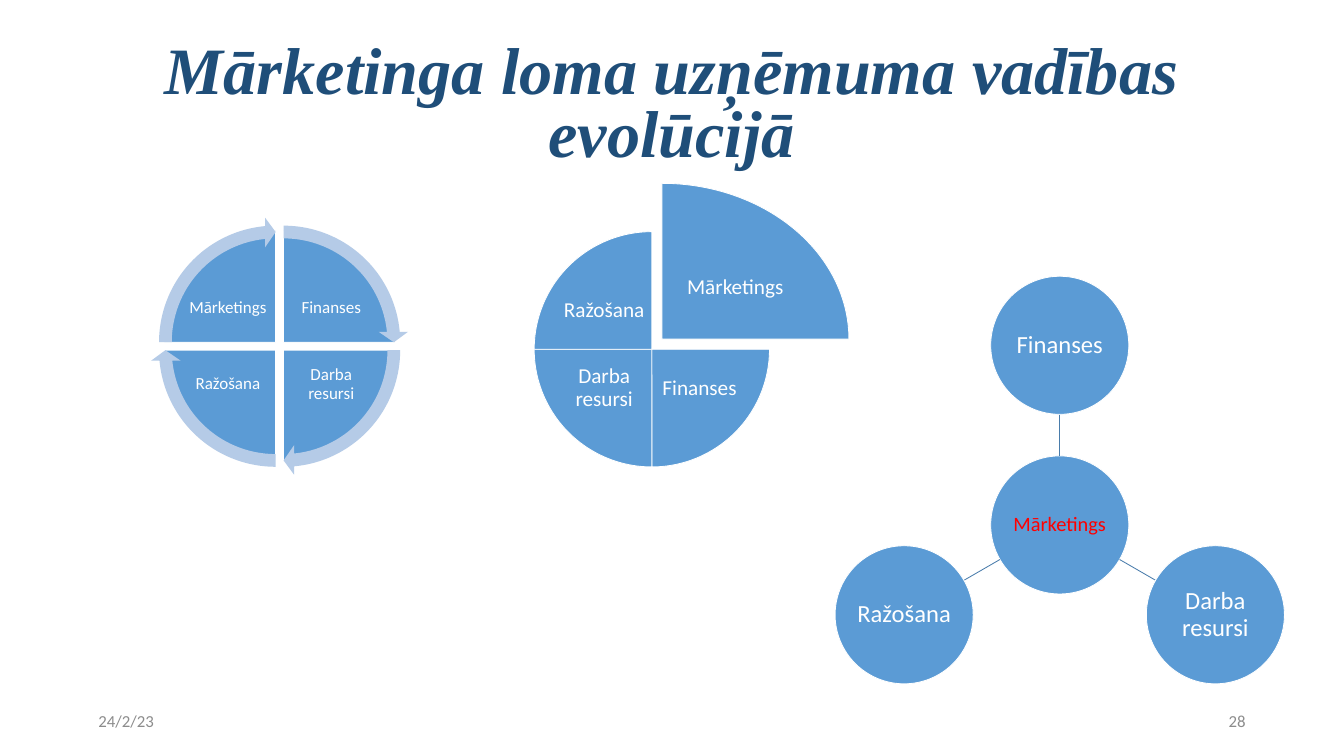
import math
from dataclasses import dataclass
from typing import Any

from lxml import etree
from pptx import Presentation
from pptx import util as u
from pptx.dml.color import RGBColor
from pptx.enum import shapes, text
from pptx.oxml import ns

BLUE = RGBColor(0x5B, 0x9B, 0xD5)
PALE = RGBColor(0xB5, 0xCB, 0xE7)
NAVY = RGBColor(0x1F, 0x4E, 0x79)
SPOKE = RGBColor(0x49, 0x7C, 0xAB)
WHITE = RGBColor(0xFF, 0xFF, 0xFF)
RED = RGBColor(0xFF, 0x00, 0x00)
GREY = RGBColor(0x8C, 0x8C, 0x8C)

LEFT, CENTER, RIGHT = (text.PP_ALIGN.LEFT, text.PP_ALIGN.CENTER,
                       text.PP_ALIGN.RIGHT)
TOP, MIDDLE = text.MSO_ANCHOR.TOP, text.MSO_ANCHOR.MIDDLE
PIE = shapes.MSO_SHAPE.PIE
ARROW = shapes.MSO_SHAPE.CIRCULAR_ARROW
OVAL = shapes.MSO_SHAPE.OVAL

QUADRANTS = [(1, -1), (1, 1), (-1, 1), (-1, -1)]
TURN, QUARTER, ARROW_HEAD = 216, 54, 3.275


def centred(cx, cy, w, h):
    return cx - w / 2, cy - h / 2, w, h


def pie_angles(i):
    return (i - 1) * QUARTER % TURN, i * QUARTER


@dataclass
class Deck:
    """Draws styled elements on the current slide."""
    s: Any
    font: str = "Calibri"

    def fill_text(self, sp, words, size, color, align=CENTER, anchor=MIDDLE,
                  inset=None, spacing=0.9, **font):
        tf = sp.text_frame
        frame = {"word_wrap": True, "vertical_anchor": anchor}
        if inset is not None:
            sides = ("left", "top", "right", "bottom")
            frame |= {f"margin_{side}": u.Inches(inset) for side in sides}
        for name, value in frame.items():
            setattr(tf, name, value)
        p = tf.paragraphs[0]
        p.alignment, p.line_spacing = align, spacing
        r = p.add_run()
        r.text = words
        for name, value in {"name": self.font, "size": u.Pt(size), **font}.items():
            setattr(r.font, name, value)
        r.font.color.rgb = color

    def label(self, box, words, size, color=WHITE, **style):
        sp = self.s.shapes.add_textbox(*map(u.Inches, box))
        self.fill_text(sp, words, size, color, **style)

    def shape(self, kind, box, fill=BLUE, outline=WHITE, adjust=()):
        sp = self.s.shapes.add_shape(kind, *map(u.Inches, box))
        sp.shadow.inherit = False
        sp.fill.solid()
        sp.fill.fore_color.rgb = fill
        if outline is None:
            sp.line.fill.background()
        else:
            sp.line.color.rgb, sp.line.width = outline, u.Pt(1)
        for i, value in enumerate(adjust):
            sp.adjustments[i] = value
        return sp

    def circle(self, cx, cy, diameter, words, size, color=WHITE):
        sp = self.shape(OVAL, centred(cx, cy, diameter, diameter))
        self.fill_text(sp, words, size, color, inset=0.02)

    def line(self, *ends):
        sp = self.s.shapes.add_connector(
            shapes.MSO_CONNECTOR.STRAIGHT, *map(u.Inches, ends))
        sp.line.color.rgb, sp.line.width = SPOKE, u.Pt(1)
        etree.SubElement(sp._element.spPr, ns.qn("a:effectLst"))


def draw_cycle(deck, cx, cy):
    names = ["Finanses", "Darba resursi", "Ražošana", "Mārketings"]
    gap = 0.065
    for i, ((sx, sy), name) in enumerate(zip(QUADRANTS, names)):
        deck.shape(PIE, centred(cx + sx * gap, cy + sy * gap, 3.64, 3.64),
                   adjust=pie_angles(i))
        deck.label(centred(cx + sx * 0.845, cy + sy * 0.625, 1.34, 1), name, 20,
                   inset=0.03)
    for i, (sx, sy) in enumerate(QUADRANTS):
        start, end = pie_angles(i)
        deck.shape(ARROW, centred(cx + sx * gap, cy + sy * gap, 4.09, 4.09),
                   PALE, None,
                   (0.051, ARROW_HEAD, (end - ARROW_HEAD) % TURN, start, 0.059))


def draw_pie(deck, cx, cy):
    deck.shape(PIE, centred(10.83, 5.55, 6.12, 5.1), adjust=pie_angles(0))
    deck.label(centred(12.03, 4.7, 2.26, 1.52), "Mārketings", 25, inset=0.03)
    names = ["Finanses", "Darba resursi", "Ražošana"]
    for i, name in enumerate(names, 1):
        sx, sy = QUADRANTS[i]
        deck.shape(PIE, centred(cx, cy, 3.85, 3.85), adjust=pie_angles(i))
        deck.label(centred(cx + sx * 0.78, cy + sy * 0.64, 1.42, 1.15), name, 25,
                   inset=0.03)


def draw_hub(deck, cx, cy):
    diameter, reach = 2.26, 2.94
    radius = diameter / 2
    deck.circle(cx, cy, diameter, "Mārketings", 24, RED)
    for angle, name in [(-90, "Finanses"), (30, "Darba resursi"),
                        (150, "Ražošana")]:
        dx, dy = math.cos(math.radians(angle)), math.sin(math.radians(angle))
        near, far = radius, reach - radius
        deck.line(cx + near * dx, cy + near * dy, cx + far * dx, cy + far * dy)
        deck.circle(cx + reach * dx, cy + reach * dy, diameter, name, 29)


def main():
    prs = Presentation()
    prs.slide_width, prs.slide_height = u.Inches(21.99), u.Inches(12.37)
    deck = Deck(prs.slides.add_slide(prs.slide_layouts[6]))
    deck.label((1.51, 0.66, 18.96, 2.39),
               "Mārketinga loma uzņēmuma vadības evolūcijā", 78, NAVY,
               anchor=TOP, spacing=0.8, name="Times New Roman", bold=True,
               italic=True)
    for x, words, align in [(1.51, "24/2/23", LEFT), (15.53, "28", RIGHT)]:
        deck.label((x, 11.46, 4.95, 0.66), words, 19.8, GREY, align=align,
                   spacing=1.0)
    draw_cycle(deck, 4.575, 5.665)
    draw_pie(deck, 10.665, 5.715)
    draw_hub(deck, 17.34, 8.59)
    prs.save("out.pptx")


if __name__ == "__main__":
    main()
